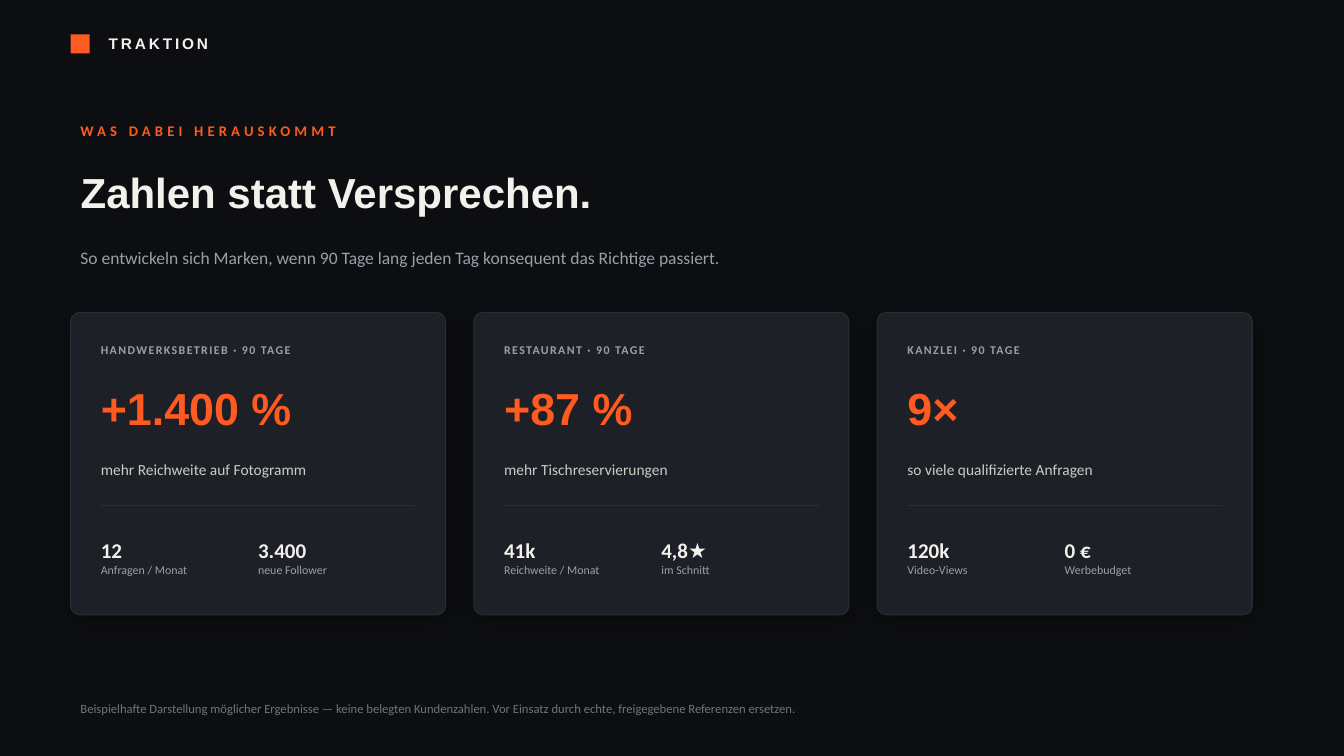
"""Build the slide with three result cards."""
from lxml import etree
from pptx import Presentation, util as u
from pptx.dml.color import RGBColor
from pptx.enum import shapes, text
from pptx.oxml import parse_xml
from pptx.oxml.ns import nsdecls, qn

COLORS = {
    "background": "0D0E11", "card": "1D2027", "border": "2A2D35", "accent": "FF5A1F",
    "light": "F3F1EC", "soft": "CDCCC6", "muted": "9AA0AA", "faint": "6F747E",
}
STYLES = {
    "brand": ({"name": "Arial", "size": u.Pt(11), "bold": True}, "light", 2),
    "kicker": ({"name": "Calibri", "size": u.Pt(10.5), "bold": True}, "accent", 3),
    "title": ({"name": "Arial", "size": u.Pt(30), "bold": True}, "light", 0),
    "lead": ({"name": "Calibri", "size": u.Pt(12.5), "bold": False}, "muted", 0),
    "sector": ({"name": "Calibri", "size": u.Pt(8.5), "bold": True}, "muted", 1),
    "result": ({"name": "Arial", "size": u.Pt(32), "bold": True}, "accent", 0),
    "claim": ({"name": "Calibri", "size": u.Pt(11), "bold": False}, "soft", 0),
    "value": ({"name": "Calibri", "size": u.Pt(15), "bold": True}, "light", 0),
    "label": ({"name": "Calibri", "size": u.Pt(8.5), "bold": False}, "muted", 0),
    "footnote": ({"name": "Calibri", "size": u.Pt(9), "bold": False}, "faint", 0),
}
CARDS = [
    ("HANDWERKSBETRIEB · 90 TAGE", "+1.400 %", "mehr Reichweite auf Fotogramm",
     [("12", "Anfragen / Monat"), ("3.400", "neue Follower")]),
    ("RESTAURANT · 90 TAGE", "+87 %", "mehr Tischreservierungen",
     [("41k", "Reichweite / Monat"), ("4,8★", "im Schnitt")]),
    ("KANZLEI · 90 TAGE", "9×", "so viele qualifizierte Anfragen",
     [("120k", "Video-Views"), ("0 €", "Werbebudget")]),
]
CARD_LEFT, CARD_STEP, CARD_PADDING = 0.7, 4, 0.3
CARD_WIDTH, STAT_WIDTH = 3.72, 1.56


def color(name):
    """Return the named colour."""
    return RGBColor.from_string(COLORS[name])


def apply(target, values):
    """Set every attribute in values on target."""
    for name, value in values.items():
        setattr(target, name, value)


class SlideBuilder:
    """Hold the styles and the current slide."""

    def __init__(self, slide, styles):
        """Keep the slide and paint its background."""
        self.slide, self.styles = slide, styles
        slide.background.fill.solid()
        slide.background.fill.fore_color.rgb = color("background")

    def fill_text(self, shape, runs, inset=True, line_spacing=None):
        """Write (text, style) runs as lines of one paragraph."""
        frame = shape.text_frame
        apply(frame, {"word_wrap": True, "auto_size": text.MSO_AUTO_SIZE.NONE,
                      "vertical_anchor": text.MSO_ANCHOR.MIDDLE})
        if not inset:
            apply(frame, dict.fromkeys(
                ("margin_left", "margin_top", "margin_right", "margin_bottom"), 0))
        paragraph = frame.paragraphs[0]
        apply(paragraph, {"alignment": text.PP_ALIGN.LEFT, "line_spacing": line_spacing})
        for index, (words, style) in enumerate(runs):
            if index:
                paragraph.add_line_break()
            run = paragraph.add_run()
            run.text = words
            values, color_name, spacing = self.styles[style]
            apply(run.font, values)
            run.font.color.rgb = color(color_name)
            if spacing:
                run._r.get_or_add_rPr().set("spc", str(spacing * 100))

    def title(self, words, box):
        """Place and format the title placeholder."""
        shape = self.slide.shapes.title
        apply(shape, dict(zip(("left", "top", "width", "height"), map(u.Inches, box))))
        self.fill_text(shape, [(words, "title")])

    def text(self, runs, box, **options):
        """Add a text box."""
        shape = self.slide.shapes.add_textbox(*map(u.Inches, box))
        self.fill_text(shape, runs, **options)

    def block(self, kind, box, fill):
        """Add a filled shape without outline or shadow."""
        shape = self.slide.shapes.add_shape(kind, *map(u.Inches, box))
        shape.fill.solid()
        shape.fill.fore_color.rgb = color(fill)
        shape.line.fill.background()
        shape.shadow.inherit = False
        return shape

    def panel(self, box):
        """Add a rounded card with a border and a soft shadow."""
        shape = self.block(shapes.MSO_SHAPE.ROUNDED_RECTANGLE, box, "card")
        shape.adjustments[0] = 0.03
        shape.line.color.rgb = color("border")
        shape.line.width = u.Pt(0.75)
        shape._element.spPr.find(qn("a:effectLst")).append(parse_xml(
            f'<a:outerShdw {nsdecls("a")} blurRad="{u.Pt(12)}" dist="{u.Pt(3)}" '
            'dir="5400000" algn="bl" rotWithShape="0"><a:srgbClr val="000000">'
            '<a:alpha val="35000"/></a:srgbClr></a:outerShdw>'))

    def rule(self, left, top, width):
        """Add a horizontal dividing line."""
        line = self.slide.shapes.add_connector(
            shapes.MSO_CONNECTOR.STRAIGHT, *map(u.Inches, (left, top, left + width, top)))
        line.line.color.rgb = color("border")
        line.line.width = u.Pt(0.75)
        etree.SubElement(line._element.spPr, qn("a:effectLst"))

    def card(self, left, sector, result, claim, stats):
        """Add one result card with its key figures."""
        self.panel((left, 3.1, CARD_WIDTH, 3))
        inner, width = left + CARD_PADDING, CARD_WIDTH - 2 * CARD_PADDING
        self.text([(sector, "sector")], (inner, 3.34, width, 0.26), inset=False)
        self.text([(result, "result")], (inner, 3.68, width, 0.72), inset=False)
        self.text([(claim, "claim")], (inner, 4.44, width, 0.42),
                  inset=False, line_spacing=1.1)
        self.rule(inner, 5.02, width)
        for column, (value, label) in enumerate(stats):
            self.text([(value, "value"), (label, "label")],
                      (inner + column * STAT_WIDTH, 5.18, STAT_WIDTH, 0.7), inset=False)


def main():
    """Build and save the presentation."""
    presentation = Presentation()
    apply(presentation, {"slide_width": u.Inches(13.33), "slide_height": u.Inches(7.5)})
    slide = presentation.slides.add_slide(presentation.slide_layouts[5])
    builder = SlideBuilder(slide, STYLES)
    builder.block(shapes.MSO_SHAPE.RECTANGLE, (0.7, 0.34, 0.19, 0.19), "accent")
    builder.text([("TRAKTION", "brand")], (0.98, 0.26, 3, 0.34))
    builder.text([("WAS DABEI HERAUSKOMMT", "kicker")], (0.7, 1.15, 8, 0.3))
    builder.title("Zahlen statt Versprechen.", (0.7, 1.55, 8, 0.7))
    builder.text([("So entwickeln sich Marken, wenn 90 Tage lang jeden Tag konsequent "
                   "das Richtige passiert.", "lead")], (0.7, 2.35, 8.6, 0.4))
    for index, content in enumerate(CARDS):
        builder.card(CARD_LEFT + index * CARD_STEP, *content)
    builder.text([("Beispielhafte Darstellung möglicher Ergebnisse — keine belegten "
                   "Kundenzahlen. Vor Einsatz durch echte, freigegebene Referenzen "
                   "ersetzen.", "footnote")], (0.7, 6.88, 11.93, 0.3))
    presentation.save("out.pptx")


if __name__ == "__main__":
    main()
